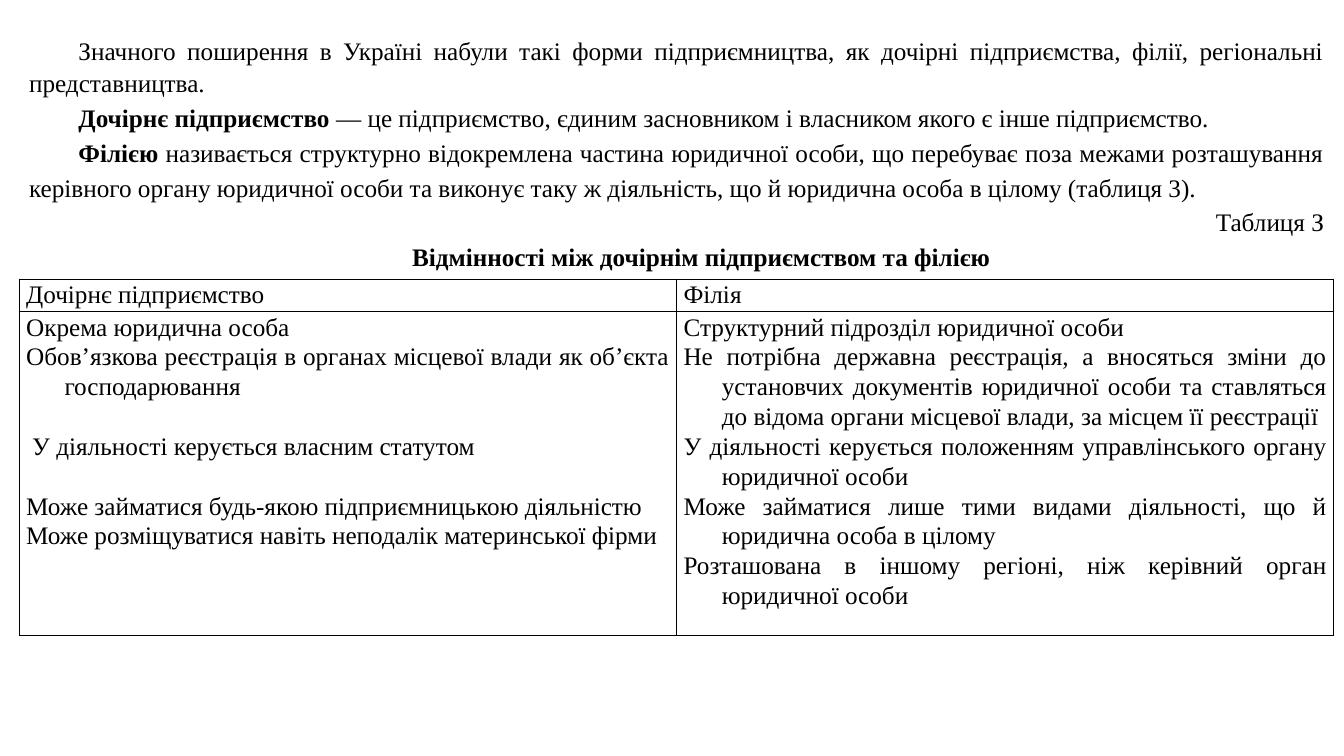
from dataclasses import dataclass

from pptx import Presentation
from pptx import util as u
from pptx.dml.color import RGBColor
from pptx.enum import text
from pptx.oxml.ns import qn
from lxml import etree

COLORS = {"ink": "000000"}
FONT = "Times New Roman"
SIZE = 18
LINE = 21.3
JUSTIFY = text.PP_ALIGN.JUSTIFY


@dataclass
class Para:
    body: str
    term: str = ""
    align: text.PP_ALIGN = JUSTIFY
    margin: float = 0
    indent: float = 0
    spacing: float = 1.07
    before: float = 0


def intro(body: str, term: str = "", align: text.PP_ALIGN = JUSTIFY,
          spacing: float = 1.15) -> Para:
    return Para(body, term, align, indent=0.49, spacing=spacing)


def item(body: str, before: float = 0) -> Para:
    return Para(body, margin=0.38, indent=-0.38, before=before)


INTRO = [
    intro("Значного поширення в Україні набули такі форми підприємництва, як дочірні "
          "підприємства, філії, регіональні представництва.", spacing=1.07),
    intro(" — це підприємство, єдиним засновником і власником якого є інше підприємство.",
          "Дочірнє підприємство"),
    intro(" називається структурно відокремлена частина юридичної особи, що перебуває поза "
          "межами розташування керівного органу юридичної особи та виконує таку ж діяльність, "
          "що й юридична особа в цілому (таблиця 3).", "Філією"),
    intro("Таблиця З", align=text.PP_ALIGN.RIGHT),
    intro("", "Відмінності між дочірнім підприємством та філією", text.PP_ALIGN.CENTER),
]

SUBSIDIARY = [
    item("Окрема юридична особа"),
    item("Обов’язкова реєстрація в органах місцевої влади як об’єкта господарювання"),
    Para("У діяльності керується власним статутом", margin=0.06, before=LINE),
    item("Може займатися будь-якою підприємницькою діяльністю", before=LINE),
    item("Може розміщуватися навіть неподалік материнської фірми"),
]

BRANCH = [
    item("Структурний підрозділ юридичної особи"),
    item("Не потрібна державна реєстрація, а вносяться зміни до установчих документів "
         "юридичної особи та ставляться до відома органи місцевої влади, за місцем її реєстрації"),
    item("У діяльності керується положенням управлінського органу юридичної особи"),
    item("Може займатися лише тими видами діяльності, що й юридична особа в цілому"),
    item("Розташована в іншому регіоні, ніж керівний орган юридичної особи"),
]

ROWS = [
    (0.32, [[Para("Дочірнє підприємство")], [Para("Філія")]]),
    (3.21, [SUBSIDIARY, BRANCH]),
]


def write(tf, paras: list[Para]) -> None:
    for i, para in enumerate(paras):
        p = tf.add_paragraph() if i else tf.paragraphs[0]
        p.alignment = para.align
        p.line_spacing = para.spacing
        p.space_before = u.Pt(para.before)
        p.font.name = FONT
        p.font.size = u.Pt(SIZE)
        p.font.color.rgb = RGBColor.from_string(COLORS["ink"])
        pPr = p._p.get_or_add_pPr()
        pPr.set("marL", str(u.Inches(para.margin)))
        pPr.set("indent", str(u.Inches(para.indent)))
        for words, bold in ((para.term, True), (para.body, False)):
            if words:
                r = p.add_run()
                r.text = words
                r.font.bold = bold


def add_borders(cell) -> None:
    tcPr = cell._tc.get_or_add_tcPr()
    for i, side in enumerate(("lnL", "lnR", "lnT", "lnB")):
        ln = etree.Element(qn(f"a:{side}"), w=str(u.Pt(1)))
        fill = etree.SubElement(ln, qn("a:solidFill"))
        etree.SubElement(fill, qn("a:srgbClr"), val=COLORS["ink"])
        tcPr.insert(i, ln)


def add_intro(s) -> None:
    box = s.shapes.add_textbox(u.Inches(0.19), u.Inches(0.28), u.Inches(13.04), u.Inches(2.49))
    tf = box.text_frame
    tf.word_wrap = True
    tf.auto_size = text.MSO_AUTO_SIZE.SHAPE_TO_FIT_TEXT
    write(tf, INTRO)


def add_comparison(s) -> None:
    height = sum(h for h, _ in ROWS)
    table = s.shapes.add_table(len(ROWS), 2, u.Inches(0.19), u.Inches(2.77),
                               u.Inches(13.04), u.Inches(height)).table
    table.first_row = False
    table.horz_banding = False
    for row, (row_height, contents) in enumerate(ROWS):
        table.rows[row].height = u.Inches(row_height)
        for col, paras in enumerate(contents):
            cell = table.cell(row, col)
            cell.margin_left = cell.margin_right = u.Inches(0.07)
            cell.margin_top = cell.margin_bottom = 0
            cell.fill.background()
            add_borders(cell)
            write(cell.text_frame, paras)


def main() -> None:
    prs = Presentation()
    prs.slide_width = u.Inches(13.33)
    prs.slide_height = u.Inches(7.5)
    s = prs.slides.add_slide(prs.slide_layouts[6])
    add_intro(s)
    add_comparison(s)
    prs.save("out.pptx")


if __name__ == "__main__":
    main()
